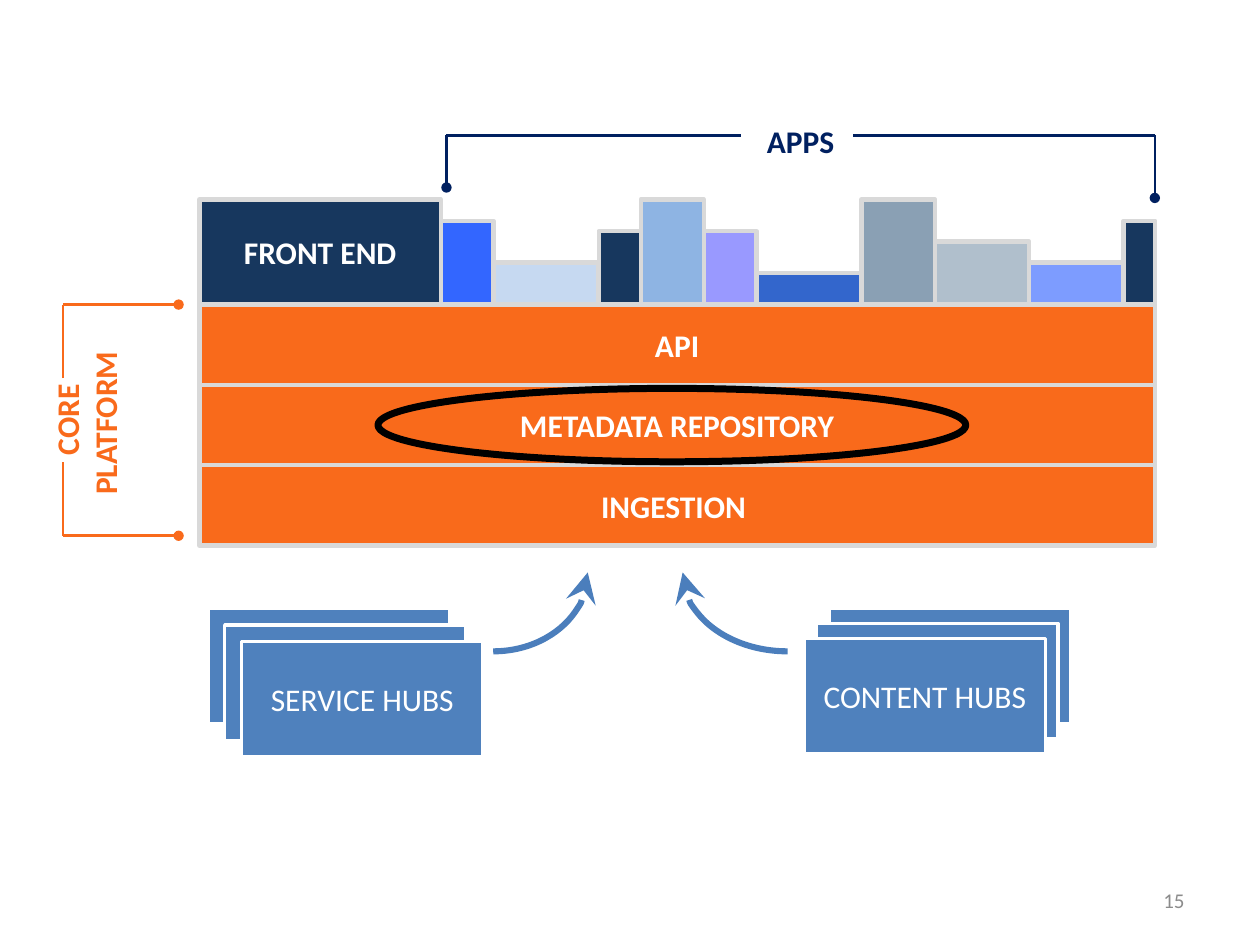
import lxml.etree
import pptx
import pptx.dml.color
import pptx.enum.shapes
import pptx.enum.text
import pptx.oxml.ns
import pptx.util

Cm = pptx.util.Cm
Pt = pptx.util.Pt
rgb = pptx.dml.color.RGBColor.from_string
qn = pptx.oxml.ns.qn
MSO = pptx.enum.shapes.MSO_SHAPE
ALIGN = pptx.enum.text.PP_ALIGN

NAVY, ORANGE, BLUE = "17375E", "F96A1B", "4F81BD"
INK, WHITE, EDGE = "002060", "FFFFFF", "D9D9D9"

prs = pptx.Presentation()
prs.slide_width = Cm(25.4)
prs.slide_height = Cm(19.05)
s = prs.slides.add_slide(prs.slide_layouts[6])


def style_line(sp, color, width, tail=None, tail_size="med"):
    """Colour an outline or connector; tail names the arrowhead at its end."""
    sp.line.color.rgb = rgb(color)
    sp.line.width = Pt(width)
    if tail:
        ln = sp.line._get_or_add_ln()
        lxml.etree.SubElement(ln, qn("a:tailEnd"), type=tail, w=tail_size, len=tail_size)


def add_item(kind, x, y, w, h, fill=None, line=None, text="", color=WHITE,
             size=18, bold=True, align=ALIGN.CENTER):
    """Add a preset shape, or a text box if kind is None; line is the arguments of style_line."""
    frame = Cm(x), Cm(y), Cm(w), Cm(h)
    if kind is None:
        sp = s.shapes.add_textbox(*frame)
    else:
        sp = s.shapes.add_shape(kind, *frame)
        sp.shadow.inherit = False
        style_line(sp, *line)
    if fill:
        sp.fill.solid()
        sp.fill.fore_color.rgb = rgb(fill)
    else:
        sp.fill.background()
    if text:
        tf = sp.text_frame
        tf.word_wrap = True
        tf.vertical_anchor = pptx.enum.text.MSO_ANCHOR.MIDDLE
        p = tf.paragraphs[0]
        p.alignment = align
        r = p.add_run()
        r.text = text
        r.font.name = "Calibri"
        r.font.size = Pt(size)
        r.font.bold = bold
        r.font.color.rgb = rgb(color)
    return sp


# Page number
add_item(None, 18.2, 17.65, 5.93, 1.01, text="15", color="8C8C8C", size=12,
         bold=False, align=ALIGN.RIGHT)

# Hubs: stacks of three cards, the front one labelled
for label, x, dx, dy in [("SERVICE HUBS", 4.19, 0.34, 0.33),
                         ("CONTENT HUBS", 16.71, -0.25, 0.3)]:
    for i in range(3):
        add_item(MSO.RECTANGLE, x + i * dx, 12.27 + i * dy, 4.87, 2.33, BLUE, (WHITE, 2),
                 label if i == 2 else "", bold=False)

# Curved arrows from the hubs to the platform
for x, w, flip in [(13.76, 4.23, False), (8.04, 3.81, True)]:
    arc = add_item(MSO.ARC, x, 9.95, w, 3.18, line=("4B7EBC", 3.5, "stealth", "lg"))
    arc.rotation = 180
    if flip:
        arc._element.spPr.find(qn("a:xfrm")).set("flipH", "1")

# Platform layers, from bottom to top
left, right, top, layer_h = 4.02, 23.28, 6.14, 1.62
border = (EDGE, 2.5)
for i, label in reversed(list(enumerate(["API", "METADATA REPOSITORY", "INGESTION "]))):
    add_item(MSO.RECTANGLE, left, top + i * layer_h, right - left, layer_h, ORANGE, border, label)

# Front end and apps, side by side on top of the platform
x = left
for w, h, fill, label in [
    (4.87, 2.12, NAVY, "FRONT END"),
    (1.06, 1.69, "3366FF", ""),
    (2.12, 0.85, "C6D9F1", ""),
    (0.85, 1.48, NAVY, ""),
    (1.27, 2.12, "8EB4E3", ""),
    (1.06, 1.48, "9999FF", ""),
    (2.12, 0.64, "3366CC", ""),
    (1.48, 2.12, "8AA0B4", ""),
    (1.9, 1.27, "B0BFCC", ""),
    (1.9, 0.85, "7D9CFF", ""),
    (0.64, 1.69, NAVY, ""),
]:
    add_item(MSO.RECTANGLE, x, top - h, w, h, fill, border, label)
    x += w

# Brackets and their labels
for x1, y1, x2, y2, color, tail in [
    (1.27, 10.8, 3.6, 10.8, ORANGE, "oval"),
    (1.27, top, 3.6, top, ORANGE, "oval"),
    (1.27, 7.62, 1.27, top, ORANGE, None),
    (1.27, 10.8, 1.27, 9.31, ORANGE, None),
    (9, 2.73, 9, 3.78, INK, "oval"),
    (right, 2.73, right, 3.99, INK, "oval"),
    (9, 2.73, 14.94, 2.73, INK, None),
    (17.2, 2.73, right, 2.73, INK, None),
]:
    cn = s.shapes.add_connector(pptx.enum.shapes.MSO_CONNECTOR.STRAIGHT,
                                Cm(x1), Cm(y1), Cm(x2), Cm(y2))
    style_line(cn, color, 1.5, tail)
    lxml.etree.SubElement(cn._element.spPr, qn("a:effectLst"))

add_item(None, -0.39, 7.56, 4.23, 1.8, text="CORE PLATFORM ", color=ORANGE).rotation = 270
add_item(None, 14.66, 2.34, 2.96, 1.02, text="APPS", color=INK)

# Highlight around the metadata repository
add_item(MSO.OVAL, 7.62, 7.83, 11.85, 1.48, line=("000000", 4))

prs.save("out.pptx")
